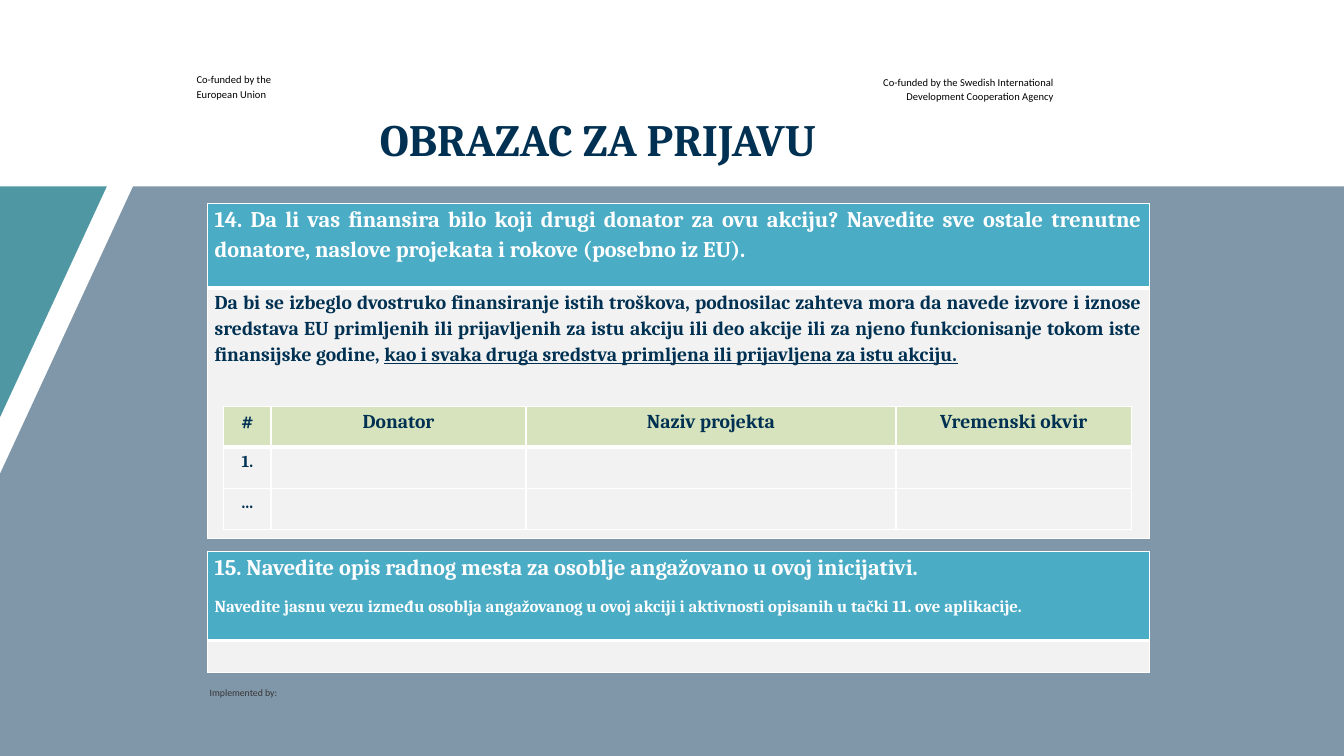
from dataclasses import dataclass

from lxml.etree import SubElement
from pptx import Presentation
from pptx.dml.color import RGBColor
from pptx.enum.text import MSO_ANCHOR as Anchor, PP_ALIGN as Align
from pptx.oxml.ns import qn
from pptx.util import Pt

NAVY = RGBColor(0x00, 0x31, 0x52)
TEAL = RGBColor(0x4F, 0x97, 0xA3)
BLUE = RGBColor(0x4B, 0xAC, 0xC6)
GREEN = RGBColor(0xD6, 0xE3, 0xBC)
GREY = RGBColor(0xF2, 0xF2, 0xF2)
WHITE = RGBColor(0xFF, 0xFF, 0xFF)
BLACK = RGBColor(0x00, 0x00, 0x00)
CHARCOAL = RGBColor(0x37, 0x34, 0x35)

LABEL = {"name": "Calibri", "size": Pt(7.5)}
HEADING = {"name": "Cambria", "bold": True}
QUESTION = {"alignment": Align.JUSTIFY, "line_spacing": 1.15, "space_after": Pt(10)}
CENTERED = {"alignment": Align.CENTER}


@dataclass
class Span:
    text: str
    size: float
    color: RGBColor
    underline: bool = False


@dataclass
class Label:
    text: str
    frame: tuple[float, float, float, float]
    font: dict
    layout: dict
    inset: tuple[float, float] = (0, 0)
    anchor: Anchor = Anchor.TOP


@dataclass
class Grid:
    """A table whose cells are lists of paragraphs, each a list of spans."""
    left: float
    top: float
    columns: list[float]
    rows: list[float]
    cells: list[list[list[list[Span]]]]
    header_fill: RGBColor
    layout: dict
    inset: tuple[float, float]


def apply(target, values: dict) -> None:
    for name, value in values.items():
        setattr(target, name, value)


def draw_label(page, label: Label) -> None:
    box = page.shapes.add_textbox(*map(Pt, label.frame))
    frame = box.text_frame
    side, end = map(Pt, label.inset)
    apply(frame, {"word_wrap": True, "vertical_anchor": label.anchor,
                  "margin_left": side, "margin_right": side,
                  "margin_top": end, "margin_bottom": end})
    para = frame.paragraphs[0]
    apply(para, label.layout)
    span = para.add_run()
    span.text = label.text
    font = dict(label.font)
    span.font.color.rgb = font.pop("color")
    apply(span.font, font)


def draw_polygon(page, points: list[tuple[float, float]], color: RGBColor, opacity: int = 100) -> None:
    start, *others = [(Pt(x), Pt(y)) for x, y in points]
    builder = page.shapes.build_freeform(*start)
    builder.add_line_segments(others, close=True)
    shape = builder.convert_to_shape()
    shape.shadow.inherit = False
    shape.line.fill.background()
    shape.fill.solid()
    shape.fill.fore_color.rgb = color
    if opacity < 100:
        tint = shape.fill._xPr.find(".//" + qn("a:srgbClr"))
        SubElement(tint, qn("a:alpha"), val=str(opacity * 1000))


def add_borders(cell, top: float, bottom: float) -> None:
    properties = cell._tc.get_or_add_tcPr()
    for tag, width in (("lnL", 1), ("lnR", 1), ("lnT", top), ("lnB", bottom)):
        line = SubElement(properties, qn(f"a:{tag}"), w=str(Pt(width)))
        fill = SubElement(line, qn("a:solidFill"))
        SubElement(fill, qn("a:srgbClr"), val=str(WHITE))


def fill_cell(cell, paragraphs: list[list[Span]], layout: dict) -> None:
    for index, spans in enumerate(paragraphs):
        frame = cell.text_frame
        para = frame.add_paragraph() if index else frame.paragraphs[0]
        apply(para, layout)
        for piece in spans:
            span = para.add_run()
            span.text = piece.text
            apply(span.font, {**HEADING, "size": Pt(piece.size), "underline": piece.underline})
            span.font.color.rgb = piece.color


def draw_grid(page, grid: Grid) -> None:
    table = page.shapes.add_table(
        len(grid.rows), len(grid.columns), Pt(grid.left), Pt(grid.top),
        Pt(sum(grid.columns)), Pt(sum(grid.rows))).table
    apply(table, {"first_row": False, "horz_banding": False})
    for column, width in zip(table.columns, grid.columns):
        column.width = Pt(width)
    side, end = map(Pt, grid.inset)
    for index, (row, height) in enumerate(zip(table.rows, grid.rows)):
        row.height = Pt(height)
        for cell, paragraphs in zip(row.cells, grid.cells[index]):
            apply(cell, {"margin_left": side, "margin_right": side,
                         "margin_top": end, "margin_bottom": end})
            add_borders(cell, 3 if index == 1 else 1, 3 if index == 0 else 1)
            cell.fill.solid()
            cell.fill.fore_color.rgb = GREY if index else grid.header_fill
            fill_cell(cell, paragraphs, grid.layout)


LABELS = [
    Label("Implemented by:", (149.8, 490.3, 102, 14.4),
          {**LABEL, "size": Pt(7), "color": CHARCOAL}, {"alignment": Align.JUSTIFY}),
    Label("Co-funded by the European Union", (140.4, 51.1, 73.4, 21.6),
          {**LABEL, "color": BLACK}, {"line_spacing": 1.15}),
    Label("Co-funded by the Swedish International Development Cooperation Agency",
          (617.8, 52.6, 134.6, 39.6), {**LABEL, "color": BLACK},
          {"alignment": Align.RIGHT, "line_spacing": 1.15}),
    Label("OBRAZAC ZA PRIJAVU", (84.2, 69.8, 686.2, 63.4),
          {**HEADING, "size": Pt(32), "color": NAVY},
          {**CENTERED, "line_spacing": 0.9}, (7.2, 3.6), Anchor.MIDDLE),
]

FUNDING = Grid(148.3, 145.4, [672.5], [60.5, 178.6], [
    [[[Span("14. Da li vas finansira bilo koji drugi donator za ovu akciju? Navedite sve ostale "
            "trenutne donatore, naslove projekata i rokove (posebno iz EU).", 16, WHITE)]]],
    [[[Span("Da bi se izbeglo dvostruko finansiranje istih troškova, podnosilac zahteva mora da "
            "navede izvore i iznose sredstava EU primljenih ili prijavljenih za istu akciju ili "
            "deo akcije ili za njeno funkcionisanje tokom iste finansijske godine, ", 14, NAVY),
       Span("kao i svaka druga sredstva primljena ili prijavljena za istu akciju.", 14, NAVY, True)]]],
], BLUE, QUESTION, (5, 0))

DONORS = Grid(159.8, 290.2, [33.8, 182.2, 264.2, 168.5], [29.3] * 3, [
    [[[Span(name, 14, NAVY)]] for name in ("#", "Donator", "Naziv projekta", "Vremenski okvir")],
    *[[[[Span(number, 12, NAVY)]], [], [], []] for number in ("1.", "…")],
], GREEN, CENTERED, (7.2, 3.6))

STAFF = Grid(148.3, 393.8, [672.5], [63.8, 22.6], [
    [[[Span("15. Navedite opis radnog mesta za osoblje angažovano u ovoj inicijativi.", 16, WHITE)],
      [Span("Navedite jasnu vezu između osoblja angažovanog u ovoj akciji i aktivnosti opisanih "
            "u tački 11. ove aplikacije.", 12, WHITE)]]],
    [[]],
], BLUE, QUESTION, (5, 0))


def main() -> None:
    deck = Presentation()
    apply(deck, {"slide_width": Pt(960), "slide_height": Pt(540)})
    page = deck.slides.add_slide(deck.slide_layouts[6])
    draw_polygon(page, [(95, 133.2), (960, 133.2), (960, 540), (0, 540), (0, 338.4)], NAVY, 50)
    draw_polygon(page, [(0, 133.2), (76.3, 133.2), (0, 298.1)], TEAL)
    for label in LABELS:
        draw_label(page, label)
    for grid in (FUNDING, DONORS, STAFF):
        draw_grid(page, grid)
    deck.save("out.pptx")


if __name__ == "__main__":
    main()
